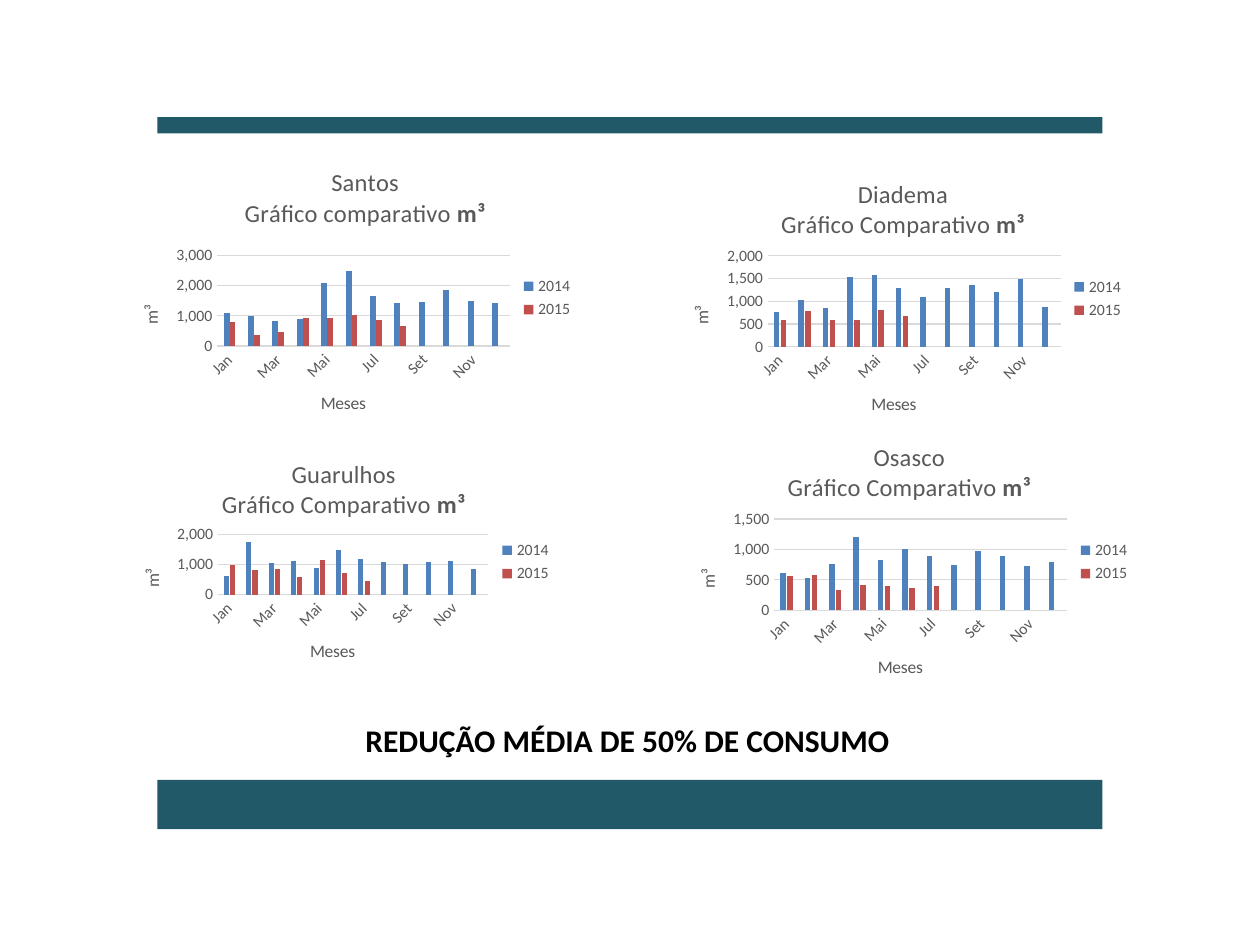
import pptx
import pptx.chart.data
import pptx.dml.color
import pptx.enum.chart
import pptx.enum.shapes
import pptx.enum.text
import pptx.oxml
import pptx.oxml.ns
import pptx.util
from pptx.util import Inches

COLORS = {"band": "215968", "2014": "4F81BD", "2015": "C0504D",
          "label": "595959", "grid": "D9D9D9", "text": "000000"}
FONT = "Calibri"
MONTHS = ["Jan", "Fev", "Mar", "Abr", "Mai", "Jun",
          "Jul", "Ago", "Set", "Out", "Nov", "Dez"]

# Boxes are left, top, width, height in inches; layouts are chart fractions
WIDE_PLOT = (0.22, 0.35, 0.62, 0.32)
CITIES = [
    {"heading": ["Diadema", "Gráfico Comparativo "], "box": (5.27, 1.24, 3.75, 2.26),
     "title_at": (0.24, 0.06), "plot": WIDE_PLOT, "overlap": -27,
     "2014": [770, 1020, 860, 1530, 1570, 1290, 1090, 1300, 1360, 1210, 1500, 870],
     "2015": [580, 780, 590, 590, 810, 670]},
    {"heading": ["Santos", "Gráfico comparativo "], "box": (0.9, 1.24, 3.75, 2.25),
     "title_at": (0.27, 0.02), "plot": WIDE_PLOT, "overlap": 0,
     "2014": [1090, 1000, 840, 900, 2100, 2490, 1650, 1410, 1470, 1840, 1480, 1430],
     "2015": [790, 360, 450, 910, 920, 1010, 860, 660]},
    {"heading": ["Guarulhos", "Gráfico Comparativo "], "box": (0.91, 3.46, 3.57, 2),
     "title_at": (0.23, 0.07), "plot": (0.23, 0.39, 0.6, 0.24), "overlap": -27,
     "2014": [610, 1730, 1040, 1120, 890, 1470, 1180, 1090, 1000, 1060, 1120, 860],
     "2015": [980, 820, 840, 590, 1140, 700, 440]},
    {"heading": ["Osasco", "Gráfico Comparativo "], "box": (5.32, 3.33, 3.75, 2.26),
     "title_at": (0.24, 0.06), "plot": WIDE_PLOT, "overlap": -27,
     "2014": [620, 530, 760, 1200, 830, 1000, 900, 750, 980, 890, 720, 790],
     "2015": [560, 580, 330, 420, 390, 370, 400]},
]


def rgb(name):
    return pptx.dml.color.RGBColor.from_string(COLORS[name])


def set_font(font, size, color="label", bold=False):
    font.name = FONT
    font.size = pptx.util.Pt(size)
    font.bold = bold
    font.color.rgb = rgb(color)


def set_layout(element, before, fractions, inner=False):
    """Fix the place of a chart part, ahead of the first tag found in before."""
    for old in element.findall(pptx.oxml.ns.qn("c:layout")):
        element.remove(old)
    values = list(zip("xywh", fractions))
    parts = '<c:layoutTarget val="inner"/>' if inner else ""
    parts += "".join(f'<c:{key}Mode val="edge"/>' for key, _ in values if key in "xy")
    parts += "".join(f'<c:{key} val="{value}"/>' for key, value in values)
    layout = pptx.oxml.parse_xml(
        f'<c:layout {pptx.oxml.ns.nsdecls("c")}>'
        f"<c:manualLayout>{parts}</c:manualLayout></c:layout>")
    following = next(child for child in element
                     if child.tag in [pptx.oxml.ns.qn(tag) for tag in before])
    following.addprevious(layout)


def add_band(page, box):
    band = page.shapes.add_shape(pptx.enum.shapes.MSO_SHAPE.RECTANGLE,
                                 *map(Inches, box))
    band.shadow.inherit = False
    band.fill.solid()
    band.fill.fore_color.rgb = rgb("band")
    band.line.fill.background()


def format_axis(axis, title):
    axis.major_tick_mark = pptx.enum.chart.XL_TICK_MARK.NONE
    axis.minor_tick_mark = pptx.enum.chart.XL_TICK_MARK.NONE
    set_font(axis.tick_labels.font, 9)
    frame = axis.axis_title.text_frame
    frame.text = title
    set_font(frame.paragraphs[0].font, 10)


def add_city_chart(page, city):
    data = pptx.chart.data.CategoryChartData(number_format="#,##0")
    data.categories = MONTHS
    for year in ("2014", "2015"):
        missing = len(MONTHS) - len(city[year])
        data.add_series(year, city[year] + [None] * missing)
    chart = page.shapes.add_chart(
        pptx.enum.chart.XL_CHART_TYPE.COLUMN_CLUSTERED,
        *map(Inches, city["box"]), data).chart
    set_font(chart.font, 10, "text")

    # Title: city, then the measure with its unit in bold
    frame = chart.chart_title.text_frame
    frame.text = "\n".join(city["heading"])
    for para in frame.paragraphs:
        set_font(para.font, 14)
    span = frame.paragraphs[1].add_run()
    span.text = "m³"
    set_font(span.font, 14, bold=True)
    chart.chart_title.include_in_layout = False
    set_layout(chart.chart_title._element, ["c:overlay"], city["title_at"])

    # Axes
    months, volume = chart.category_axis, chart.value_axis
    format_axis(months, "Meses")
    format_axis(volume, "m³")
    volume.axis_title.text_frame._txBody.bodyPr.set("rot", "-5400000")
    months.format.line.color.rgb = rgb("grid")
    months.format.line.width = pptx.util.Pt(0.75)
    volume.format.line.fill.background()
    volume.major_gridlines.format.line.color.rgb = rgb("grid")
    volume.major_gridlines.format.line.width = pptx.util.Pt(0.75)
    volume.tick_labels.number_format = "#,##0"
    volume.tick_labels.number_format_is_linked = False

    # Legend
    chart.has_legend = True
    chart.legend.position = pptx.enum.chart.XL_LEGEND_POSITION.RIGHT
    chart.legend.include_in_layout = False
    set_font(chart.legend.font, 9)

    # Columns
    plot = chart.plots[0]
    plot.vary_by_categories = False
    plot.gap_width = 219
    plot.overlap = city["overlap"]
    for series in plot.series:
        series.format.fill.solid()
        series.format.fill.fore_color.rgb = rgb(series.name)
    plot_area = chart._chartSpace.chart.plotArea
    set_layout(plot_area, ["c:barChart"], city["plot"], inner=True)


def add_conclusion(page, box):
    frame = page.shapes.add_textbox(*map(Inches, box)).text_frame
    frame.word_wrap = True
    para = frame.paragraphs[0]
    para.text = "REDUÇÃO MÉDIA DE 50% DE CONSUMO"
    para.alignment = pptx.enum.text.PP_ALIGN.CENTER
    set_font(para.font, 18, "text", bold=True)


def main():
    deck = pptx.Presentation()
    deck.slide_width, deck.slide_height = Inches(10), Inches(7.5)
    page = deck.slides.add_slide(deck.slide_layouts[6])
    add_band(page, (1.25, 6.19, 7.5, 0.39))
    add_band(page, (1.25, 0.93, 7.5, 0.13))
    for city in CITIES:
        add_city_chart(page, city)
    add_conclusion(page, (2.29, 5.67, 5.38, 0.4))
    deck.save("out.pptx")


if __name__ == "__main__":
    main()
